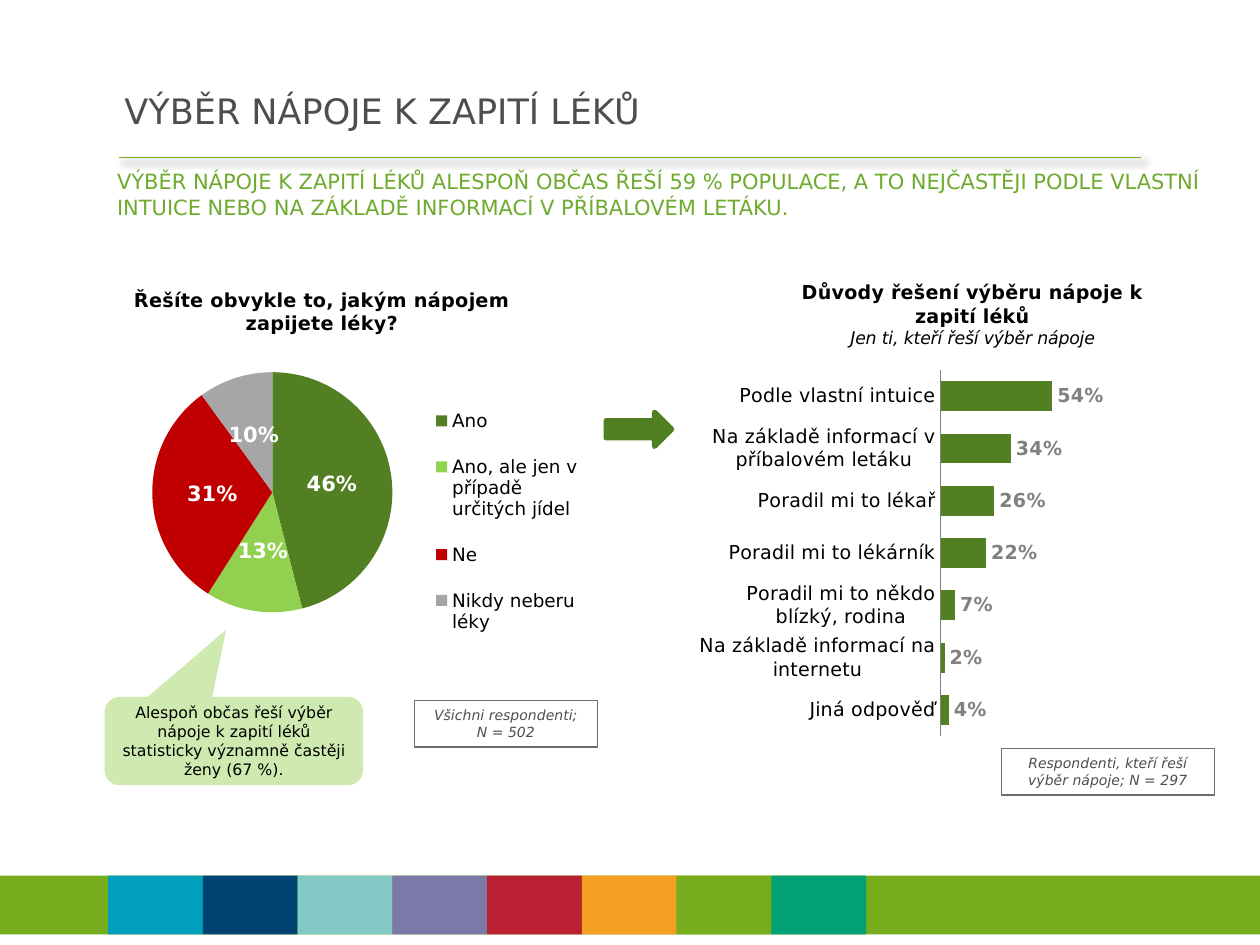
from lxml import etree
from pptx import Presentation
from pptx import util as u
from pptx.chart.data import CategoryChartData
from pptx.dml.color import RGBColor
from pptx.enum import chart as c, shapes, text
from pptx.oxml import parse_xml
from pptx.oxml.ns import nsdecls, qn

FONT = "DejaVu Sans"
GREEN = "527F22"
STRIPES = ["009FBB", "004272", "83C9C6", "7C78A8", "B92032", "F49F22", "77AD1C", "00A275"]
PIE = [("Ano", 0.46, GREEN), ("Ano, ale jen v případě určitých jídel", 0.13, "92D050"),
       ("Ne", 0.31, "C00000"), ("Nikdy neberu léky", 0.1, "A6A6A6")]
REASONS = [("Podle vlastní intuice", 0.54), ("Na základě informací v příbalovém letáku", 0.34),
           ("Poradil mi to lékař", 0.26), ("Poradil mi to lékárník", 0.22),
           ("Poradil mi to někdo blízký, rodina", 0.07),
           ("Na základě informací na internetu", 0.02), ("Jiná odpověď", 0.04)]


def rgb(value):
    return RGBColor.from_string(value)


def lengths(values):
    return [u.Cm(value) for value in values]


def apply(target, **values):
    for name, value in values.items():
        setattr(target, name, value)


def style(font, size, color="000000", **values):
    apply(font, name=FONT, size=u.Pt(size), **values)
    font.color.rgb = rgb(color)


def write(shape, content, size, color, anchor=text.MSO_ANCHOR.TOP, align=text.PP_ALIGN.LEFT, **font):
    apply(shape.text_frame, word_wrap=True, vertical_anchor=anchor)
    paragraph = shape.text_frame.paragraphs[0]
    paragraph.alignment = align
    run = paragraph.add_run()
    run.text = content
    style(run.font, size, color, **font)


def add_text(slide, box, content, size, color, **options):
    write(slide.shapes.add_textbox(*lengths(box)), content, size, color, **options)


def add_block(slide, kind, box, fill=None, line=None, width=0.75):
    shape = slide.shapes.add_shape(kind, *lengths(box))
    shape.shadow.inherit = False
    if fill:
        shape.fill.solid()
        shape.fill.fore_color.rgb = rgb(fill)
    else:
        shape.fill.background()
    if line:
        shape.line.color.rgb = rgb(line)
        shape.line.width = u.Pt(width)
    else:
        shape.line.fill.background()
    return shape


def add_note(slide, box, content):
    shape = add_block(slide, shapes.MSO_SHAPE.RECTANGLE, box, line="6E6E6E")
    write(shape, content, 8, "4E4E4E", align=text.PP_ALIGN.CENTER, italic=True)


def add_rule(slide):
    line = slide.shapes.add_connector(shapes.MSO_CONNECTOR.STRAIGHT, *lengths([2.39, 3.18, 23.01, 3.18]))
    line.line.color.rgb = rgb("77AD1C")
    line.line.width = u.Pt(0.75)
    line._element.spPr.append(parse_xml(
        f'<a:effectLst {nsdecls("a")}><a:outerShdw blurRad="50800" dist="38100" dir="2700000">'
        '<a:srgbClr val="000000"><a:alpha val="40000"/></a:srgbClr></a:outerShdw></a:effectLst>'))


def add_stripes(slide):
    rectangle = shapes.MSO_SHAPE.RECTANGLE
    add_block(slide, rectangle, [0, 17.65, 25.4, 1.19], "77AD1C")
    for index, color in enumerate(STRIPES):
        add_block(slide, rectangle, [2.18 + index * 1.91, 17.65, 1.91, 1.19], color)


def place(element, inner=False, **fractions):
    for old in element.findall(qn("c:layout")):
        element.remove(old)
    layout = etree.Element(qn("c:layout"))
    manual = etree.SubElement(layout, qn("c:manualLayout"))
    if inner:
        etree.SubElement(manual, qn("c:layoutTarget"), val="inner")
    for name in ("x", "y"):
        etree.SubElement(manual, qn(f"c:{name}Mode"), val="edge")
    for name, value in fractions.items():
        etree.SubElement(manual, qn(f"c:{name}"), val=str(value))
    overlay = element.find(qn("c:overlay"))
    if overlay is None:
        element.insert(0, layout)
    else:
        overlay.addprevious(layout)


def add_chart(slide, kind, box, rows, title, title_at, plot_at, label_size, label_color, position):
    data = CategoryChartData(number_format="0%")
    data.categories = [row[0] for row in rows]
    data.add_series("Odpovědi", [row[1] for row in rows])
    chart = slide.shapes.add_chart(kind, *lengths(box), data).chart
    style(chart.font, 18)
    chart.has_legend = False
    frame = chart.chart_title.text_frame
    for index, (content, size, font) in enumerate(title):
        paragraph = frame.add_paragraph() if index else frame.paragraphs[0]
        run = paragraph.add_run()
        run.text = content
        style(run.font, size, **font)
    place(chart.chart_title._element, **title_at)
    place(chart._chartSpace.chart.plotArea, inner=True, **plot_at)
    plot = chart.plots[0]
    plot.has_data_labels = True
    apply(plot.data_labels, show_value=True, number_format="0%",
          number_format_is_linked=False, position=position)
    style(plot.data_labels.font, label_size, label_color, bold=True)
    return chart


def add_pie(slide):
    chart = add_chart(slide, c.XL_CHART_TYPE.PIE, [1.09, 5.44, 11, 8.97], PIE,
                      [("Řešíte obvykle to, jakým nápojem zapijete léky?", 11, {"bold": True})],
                      {"x": 0.14, "y": 0.03}, {"x": 0.18, "y": 0.23, "w": 0.44, "h": 0.54},
                      12, "FFFFFF", c.XL_LABEL_POSITION.CENTER)
    chart.plots[0].vary_by_categories = True
    for index, row in enumerate(PIE):
        fill = chart.plots[0].series[0].points[index].format.fill
        fill.solid()
        fill.fore_color.rgb = rgb(row[2])
    chart.has_legend = True
    apply(chart.legend, position=c.XL_LEGEND_POSITION.LEFT, include_in_layout=False)
    style(chart.legend.font, 10.5)
    place(chart.legend._element, x=0.68, y=0.26, w=0.3, h=0.61)


def add_bars(slide):
    title = [("Důvody řešení výběru nápoje k zapití léků", 11, {"bold": True}),
             ("Jen ti, kteří řeší výběr nápoje", 10, {"bold": False, "italic": True})]
    chart = add_chart(slide, c.XL_CHART_TYPE.BAR_CLUSTERED, [14.1, 5.44, 10.03, 10.11], REASONS,
                      title, {"x": 0.19, "y": 0.01}, {"x": 0.48, "y": 0.2, "w": 0.42, "h": 0.73},
                      11, "808080", c.XL_LABEL_POSITION.OUTSIDE_END)
    apply(chart.plots[0], gap_width=75, vary_by_categories=False)
    fill = chart.plots[0].series[0].format.fill
    fill.solid()
    fill.fore_color.rgb = rgb(GREEN)
    apply(chart.value_axis, minimum_scale=0, maximum_scale=1, has_major_gridlines=False, visible=False)
    axis = chart.category_axis
    apply(axis, reverse_order=True, major_tick_mark=c.XL_TICK_MARK.NONE, has_major_gridlines=False)
    axis.format.line.color.rgb = rgb("808080")
    style(axis.tick_labels.font, 11)


def main():
    presentation = Presentation()
    apply(presentation, slide_width=u.Cm(25.4), slide_height=u.Cm(19.05))
    slide = presentation.slides.add_slide(presentation.slide_layouts[6])
    add_rule(slide)
    add_stripes(slide)
    add_text(slide, [2.26, 1.57, 22.53, 1.3], "VÝBĚR NÁPOJE K ZAPITÍ LÉKŮ", 20, "4E4E4E",
             anchor=text.MSO_ANCHOR.MIDDLE)
    add_text(slide, [2.11, 3.28, 22.4, 1.4],
             "VÝBĚR NÁPOJE K ZAPITÍ LÉKŮ ALESPOŇ OBČAS ŘEŠÍ 59 % POPULACE, A TO NEJČASTĚJI "
             "PODLE VLASTNÍ INTUICE NEBO NA ZÁKLADĚ INFORMACÍ V PŘÍBALOVÉM LETÁKU.", 12, "6EAA2E")
    add_pie(slide)
    add_note(slide, [8.36, 14.12, 3.68, 0.94], "Všichni respondenti; N = 502")
    callout = add_block(slide, shapes.MSO_SHAPE.ROUNDED_RECTANGULAR_CALLOUT, [2.11, 14.05, 5.21, 1.78], "CEEAB0")
    for index, value in enumerate([-0.03, -1.26, 0.17]):
        callout.adjustments[index] = value
    write(callout, "Alespoň občas řeší výběr nápoje k zapití léků statisticky významně častěji ženy (67 %).",
          9, "000000", anchor=text.MSO_ANCHOR.MIDDLE, align=text.PP_ALIGN.CENTER)
    add_bars(slide)
    add_note(slide, [20.19, 15.09, 4.29, 0.94], "Respondenti, kteří řeší výběr nápoje; N = 297")
    add_block(slide, shapes.MSO_SHAPE.RIGHT_ARROW, [12.22, 8.31, 1.32, 0.69], GREEN, GREEN, 3)
    presentation.save("out.pptx")


if __name__ == "__main__":
    main()
